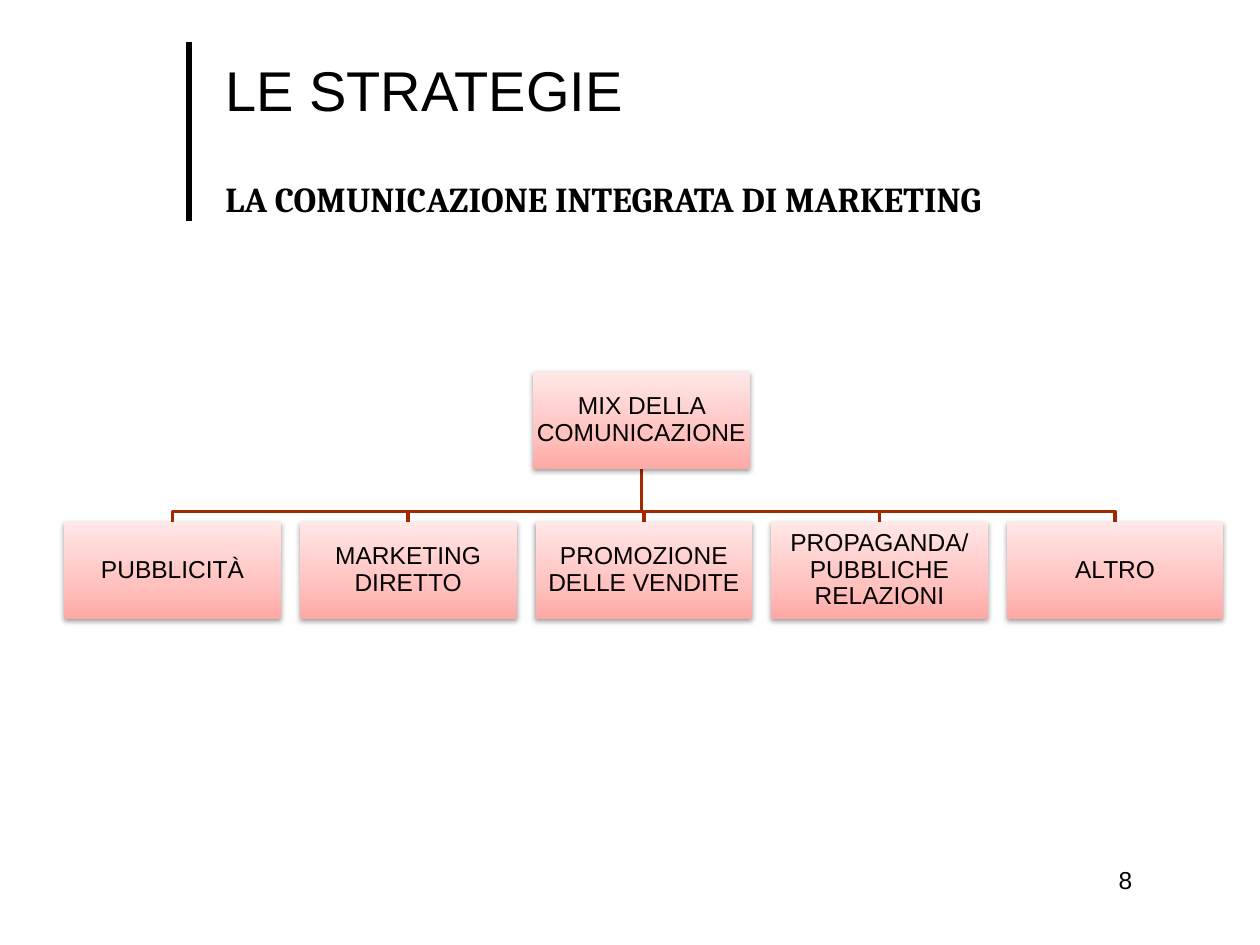
from copy import deepcopy

from pptx import Presentation
from pptx.dml.color import RGBColor
from pptx.enum.shapes import MSO_CONNECTOR, MSO_SHAPE
from pptx.enum.text import MSO_ANCHOR as ANCHOR, PP_ALIGN as ALIGN
from pptx.oxml import parse_xml
from pptx.oxml.ns import nsdecls, qn
from pptx.util import Inches, Pt

COLORS = {"text": "000000", "branch": "A32900"}
GRADIENT = [(0, "FFA9A5"), (0.35, "FFC2BF"), (1, "FFE8E7")]

TEXTS = [
    {"text": "LE STRATEGIE", "at": (1.69, 0.27, 7.95, 0.88), "anchor": ANCHOR.MIDDLE,
     "font": {"size": Pt(32), "name": "Arial"}, "paragraph": {}},
    {"text": "LA COMUNICAZIONE INTEGRATA DI MARKETING", "at": (1.69, 1.4, 7.95, 5.58),
     "anchor": ANCHOR.TOP, "font": {"size": Pt(20), "name": "Cambria", "bold": True},
     "paragraph": {"alignment": ALIGN.JUSTIFY, "line_spacing": 0.9}},
    {"text": "8", "at": (8.78, 6.82, 1.42, 0.5), "anchor": ANCHOR.TOP,
     "font": {"size": Pt(14), "name": "Arial"}, "paragraph": {}},
]
ROOT = "MIX DELLA COMUNICAZIONE"
CHILDREN = ["PUBBLICITÀ", "MARKETING DIRETTO", "PROMOZIONE DELLE VENDITE",
            "PROPAGANDA/ PUBBLICHE RELAZIONI", "ALTRO"]

BOX_WIDTH, BOX_HEIGHT = 1.72, 0.77
ROOT_LEFT, ROOT_TOP = 4.23, 2.95
CHILD_LEFT, CHILD_TOP, CHILD_STEP = 0.51, 4.14, 1.87
BRANCH_TOP, BRANCH_BEND = 3.71, 4.06
BOX_FORMAT = {"font": {"size": Pt(14), "name": "Arial"},
              "paragraph": {"alignment": ALIGN.CENTER, "line_spacing": 0.9}}


def rgb(value):
    return RGBColor.from_string(value)


def set_all(target, values):
    for name, value in values.items():
        setattr(target, name, value)


def write_text(shape, text, style, anchor):
    set_all(shape.text_frame, {"word_wrap": True, "vertical_anchor": anchor})
    paragraph = shape.text_frame.paragraphs[0]
    run = paragraph.add_run()
    run.text = text
    set_all(paragraph, style["paragraph"])
    set_all(run.font, style["font"])
    run.font.color.rgb = rgb(COLORS["text"])


def add_box(slide, text, left, top):
    shape = slide.shapes.add_shape(
        MSO_SHAPE.RECTANGLE, *map(Inches, (left, top, BOX_WIDTH, BOX_HEIGHT)))
    properties = shape.element.spPr
    shape.fill.gradient()
    shape.fill.gradient_angle = 90
    stops = properties.find(".//" + qn("a:gsLst"))
    stops.append(deepcopy(stops[0]))
    for stop, (position, color) in zip(shape.fill.gradient_stops, GRADIENT):
        stop.position = position
        stop.color.rgb = rgb(color)
    shape.line.fill.background()
    shape.shadow.inherit = False
    properties.find(qn("a:effectLst")).append(parse_xml(
        f'<a:outerShdw {nsdecls("a")} blurRad="40000" dist="20000" dir="5400000" rotWithShape="0">'
        '<a:srgbClr val="000000"><a:alpha val="38000"/></a:srgbClr></a:outerShdw>'))
    margins = ("margin_left", "margin_top", "margin_right", "margin_bottom")
    set_all(shape.text_frame, dict.fromkeys(margins, Inches(0.01)))
    write_text(shape, text, BOX_FORMAT, ANCHOR.MIDDLE)


def add_branch(slide, start, end):
    builder = slide.shapes.build_freeform(Inches(start), Inches(BRANCH_TOP))
    corners = [(start, BRANCH_BEND), (end, BRANCH_BEND), (end, CHILD_TOP)]
    builder.add_line_segments([(Inches(x), Inches(y)) for x, y in corners], close=False)
    branch = builder.convert_to_shape()
    branch.fill.background()
    branch.line.color.rgb = rgb(COLORS["branch"])
    branch.line.width = Pt(2)
    branch.shadow.inherit = False


def main():
    presentation = Presentation()
    set_all(presentation, {"slide_width": Inches(10), "slide_height": Inches(7.5)})
    slide = presentation.slides.add_slide(presentation.slide_layouts[6])

    rule = slide.shapes.add_connector(
        MSO_CONNECTOR.STRAIGHT, *map(Inches, (1.5, 1.75, 1.5, 0.33)))
    rule.line.color.rgb = rgb(COLORS["text"])
    rule.line.width = Pt(3)
    rule.element.spPr.append(parse_xml(f'<a:effectLst {nsdecls("a")}/>'))

    for item in TEXTS:
        box = slide.shapes.add_textbox(*map(Inches, item["at"]))
        write_text(box, item["text"], item, item["anchor"])

    lefts = [CHILD_LEFT + index * CHILD_STEP for index in range(len(CHILDREN))]
    for left in lefts:
        add_branch(slide, ROOT_LEFT + BOX_WIDTH / 2, left + BOX_WIDTH / 2)
    add_box(slide, ROOT, ROOT_LEFT, ROOT_TOP)
    for text, left in zip(CHILDREN, lefts):
        add_box(slide, text, left, CHILD_TOP)

    presentation.save("out.pptx")


if __name__ == "__main__":
    main()
